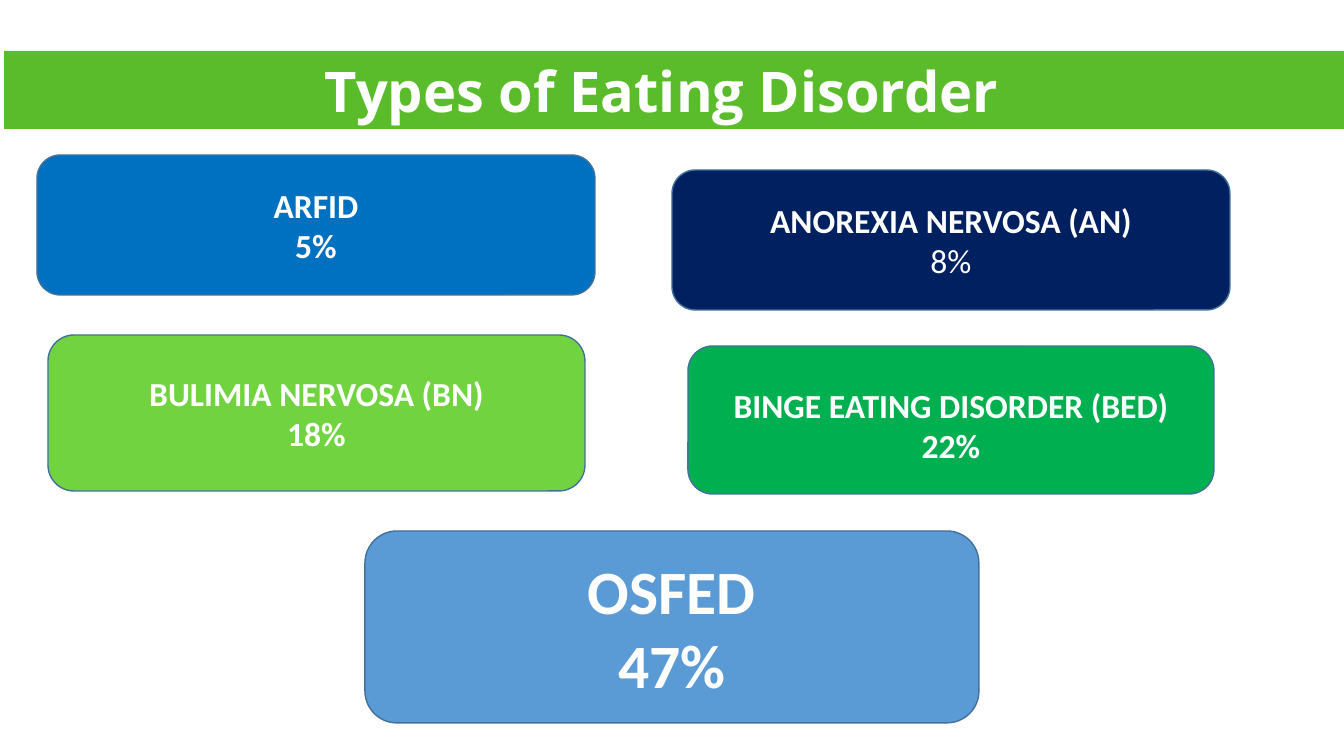
from dataclasses import dataclass

from pptx import Presentation
from pptx.dml.color import RGBColor as RGB
from pptx.enum.shapes import MSO_SHAPE as SHAPE
from pptx.enum.text import MSO_ANCHOR as ANCHOR, PP_ALIGN as ALIGN
from pptx.util import Pt

PX = 914400 / 100.8  # EMU per px


@dataclass(frozen=True)
class Theme:
    banner: str = "5ABC2B"
    arfid: str = "0070C0"
    anorexia: str = "002060"
    bulimia: str = "72D341"
    binge: str = "00B050"
    osfed: str = "5B9BD5"
    outline: str = "42719B"
    text: str = "FFFFFF"
    heading_font: str = "Open Sans"
    body_font: str = "Calibri"
    heading_size: int = 40
    card_size: int = 24
    osfed_size: int = 44


theme = Theme()


def px(length):
    return round(length * PX)


def add_panel(kind, box, colour, lines, font, size):
    """Add a filled shape with centred lines, given as (text, bold) pairs."""
    panel = slide.shapes.add_shape(kind, *map(px, box))
    panel.shadow.inherit = False
    panel.fill.solid()
    panel.fill.fore_color.rgb = RGB.from_string(colour)
    frame = panel.text_frame
    frame.word_wrap = True
    frame.vertical_anchor = ANCHOR.MIDDLE
    for index, (text, bold) in enumerate(lines):
        line = frame.add_paragraph() if index else frame.paragraphs[0]
        line.alignment = ALIGN.CENTER
        run = line.add_run()
        run.text = text
        run.font.name = font
        run.font.size = Pt(size)
        run.font.bold = bold
        run.font.color.rgb = RGB.from_string(theme.text)
    return panel


deck = Presentation()
deck.slide_width, deck.slide_height = px(1344), px(756)
slide = deck.slides.add_slide(deck.slide_layouts[6])

# Disorder cards: name, share, bold share, box, colour, text size, top inset
disorders = [
    ("ANOREXIA NERVOSA (AN)", "8%", False, (672, 170, 558, 140), theme.anorexia, theme.card_size, 5),
    ("BULIMIA NERVOSA (BN)", "18%", True, (48, 335, 537, 156), theme.bulimia, theme.card_size, 5),
    ("ARFID", "5%", True, (37, 155, 558, 140), theme.arfid, theme.card_size, 5),
    ("BINGE EATING DISORDER (BED)", "22%", True, (688, 346, 526, 148), theme.binge, theme.card_size, 15),
    ("OSFED", "47%", True, (365, 531, 614, 192), theme.osfed, theme.osfed_size, 5),
]
for name, share, share_bold, box, colour, size, top_inset in disorders:
    card = add_panel(SHAPE.ROUNDED_RECTANGLE, box, colour,
                     [(name, True), (share, share_bold)], theme.body_font, size)
    card.line.color.rgb = RGB.from_string(theme.outline)
    card.line.width = Pt(1)
    card.text_frame.margin_top = px(top_inset)

# Heading banner, its text set slightly left of centre
banner = add_panel(SHAPE.RECTANGLE, (4, 51, 1344, 78), theme.banner,
                   [("Types of Eating Disorder", True)], theme.heading_font, theme.heading_size)
banner.line.fill.background()
banner.text_frame.margin_right = px(39)

deck.save("out.pptx")
